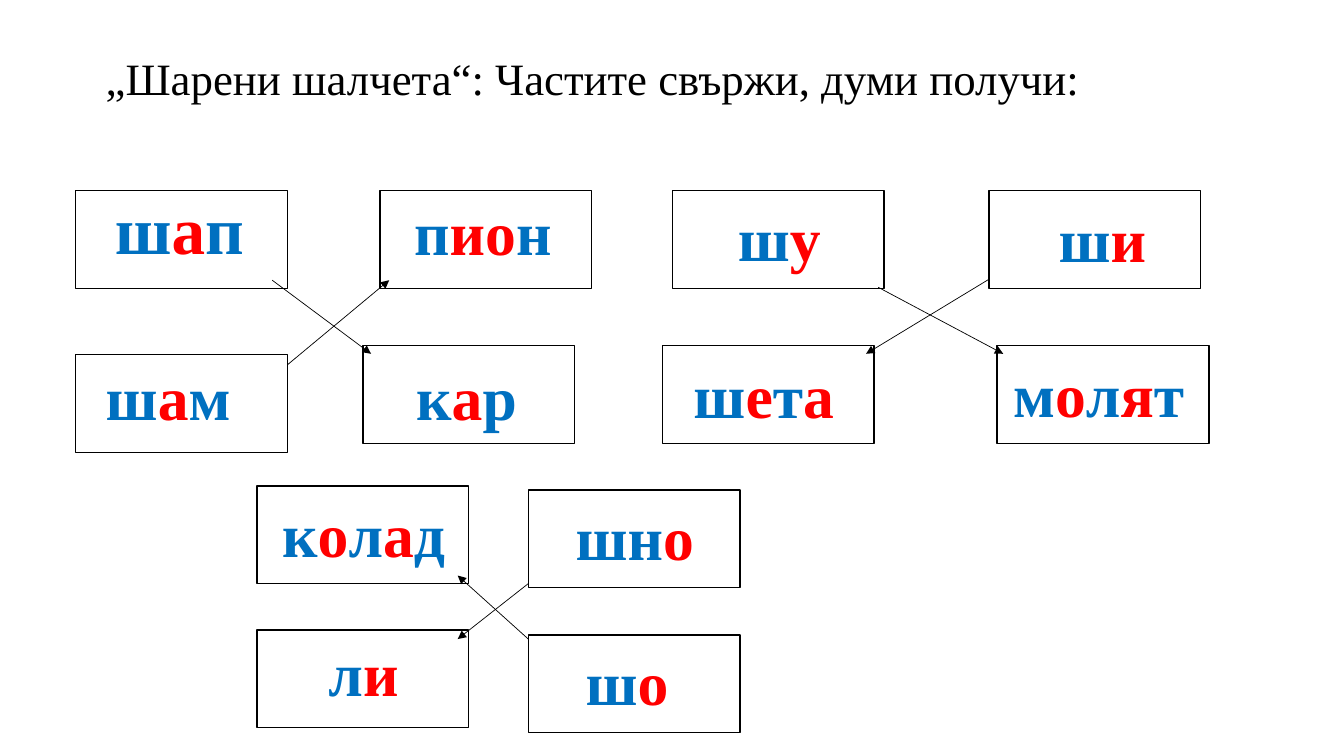
from itertools import groupby

from lxml import etree
from pptx import Presentation
from pptx.dml.color import RGBColor
from pptx.enum import shapes, text
from pptx.oxml import ns
from pptx.util import Inches, Pt

BLACK = RGBColor(0x00, 0x00, 0x00)
WHITE = RGBColor(0xFF, 0xFF, 0xFF)
CONSONANT_BLUE = RGBColor(0x00, 0x70, 0xC0)
VOWEL_RED = RGBColor(0xFF, 0x00, 0x00)
VOWELS = "аеиоуюя"
CARD_WIDTH, CARD_HEIGHT = 2.1, 0.97

deck = Presentation()
deck.slide_width, deck.slide_height = Inches(13.33), Inches(7.5)
slide = deck.slides.add_slide(deck.slide_layouts[6])


def add_line_of_text(left, top, width, height):
    label = slide.shapes.add_textbox(*map(Inches, (left, top, width, height)))
    label.text_frame.word_wrap = True
    label.text_frame.auto_size = text.MSO_AUTO_SIZE.SHAPE_TO_FIT_TEXT
    return label.text_frame.paragraphs[0]


def add_styled_run(paragraph, wording, size, color, bold=False):
    run = paragraph.add_run()
    run.text = wording
    run.font.color.rgb = color
    style = {"name": "Times New Roman", "size": Pt(size), "bold": bold}
    for attribute, value in style.items():
        setattr(run.font, attribute, value)


heading = add_line_of_text(0.95, 0.45, 11.77, 0.64)
add_styled_run(heading, "„Шарени шалчета“: Частите свържи, думи получи:", 32, BLACK)

card_rows = [
    (1.89, [0.75, 3.77, 6.67, 9.81]),
    (3.52, [0.75]),
    (3.43, [3.6, 6.57, 9.89]),
    (4.82, [2.55]),
    (4.86, [5.24]),
    (6.25, [2.55]),
    (6.3, [5.24]),
]
for top, lefts in card_rows:
    for left in lefts:
        card = slide.shapes.add_shape(
            shapes.MSO_SHAPE.RECTANGLE,
            *map(Inches, (left, top, CARD_WIDTH, CARD_HEIGHT)),
        )
        card.shadow.inherit = False
        card.fill.solid()
        card.fill.fore_color.rgb = WHITE
        card.line.color.rgb = BLACK
        card.line.width = Pt(1)

word_parts = [
    ("шап", 1.04, 1.81, 1.49, 48),
    ("пион", 4.01, 1.87, 1.59, 44),
    ("шу", 7.22, 1.93, 1.25, 44),
    ("ши", 10.4, 1.94, 1.08, 44),
    ("шам", 0.95, 3.51, 1.58, 44),
    ("кар", 4.03, 3.51, 1.34, 44),
    ("шета", 6.78, 3.49, 1.94, 44),
    ("молят", 9.95, 3.48, 1.9, 44),
    ("колад", 2.7, 4.87, 1.95, 44),
    ("шно", 5.61, 4.9, 1.41, 44),
    ("ли", 3.16, 6.25, 1.04, 44),
    ("шо", 5.71, 6.34, 1.21, 44),
]
for word_part, left, top, width, size in word_parts:
    syllable = add_line_of_text(left, top, width, 0.91 if size == 48 else 0.84)
    for is_vowel, letters in groupby(word_part, lambda letter: letter in VOWELS):
        color = VOWEL_RED if is_vowel else CONSONANT_BLUE
        add_styled_run(syllable, "".join(letters), size, color, bold=True)

matches = [
    (2.7, 2.78, 3.68, 3.51),
    (2.85, 3.62, 3.86, 2.78),
    (8.71, 2.85, 9.95, 3.51),
    (9.81, 2.77, 8.59, 3.51),
    (5.24, 6.34, 4.54, 5.71),
    (5.24, 5.79, 4.54, 6.34),
]
for ends in matches:
    arrow = slide.shapes.add_connector(
        shapes.MSO_CONNECTOR.STRAIGHT, *map(Inches, ends)
    )
    arrow.line.color.rgb = BLACK
    arrow.line.width = Pt(0.5)
    arrowhead = etree.SubElement(arrow.line._get_or_add_ln(), ns.qn("a:tailEnd"))
    arrowhead.set("type", "triangle")
    etree.SubElement(arrow._element.spPr, ns.qn("a:effectLst"))

deck.save("out.pptx")
